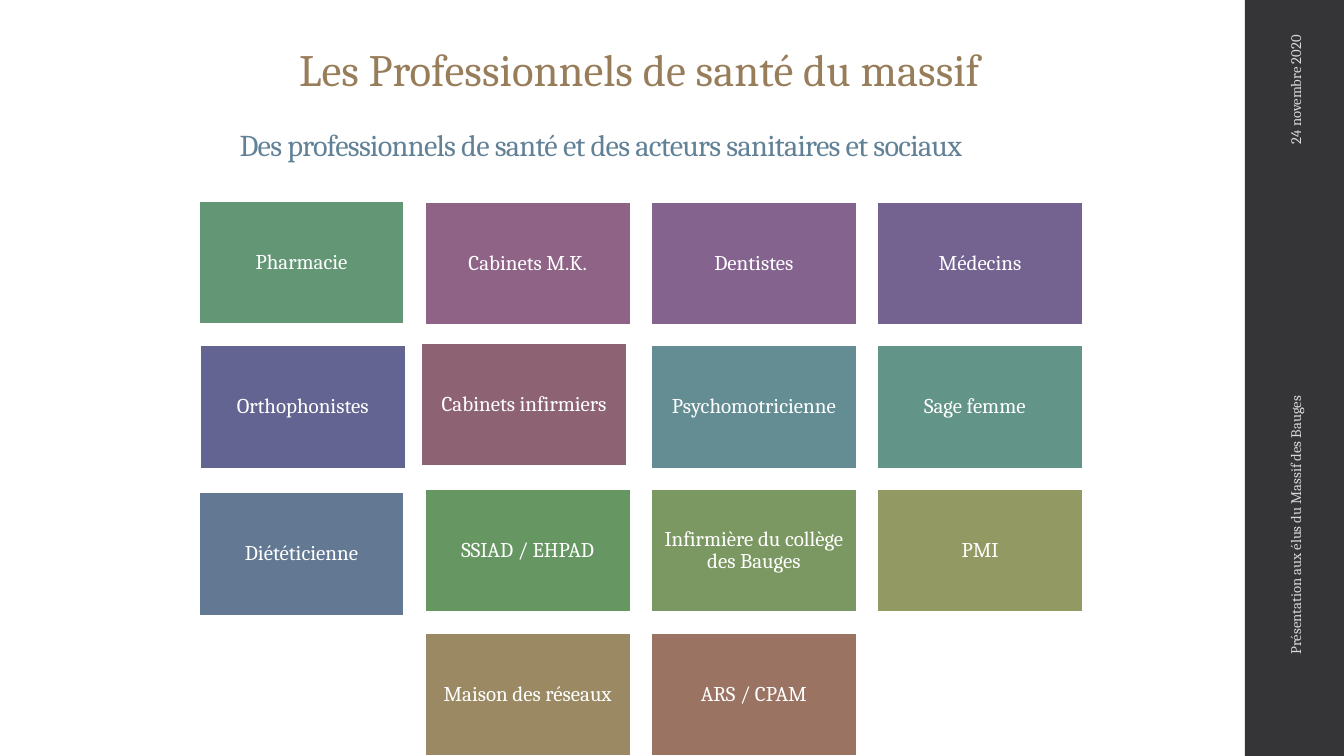
from pptx import Presentation
from pptx.dml.color import RGBColor
from pptx.enum import shapes, text
from pptx.util import Cm, Pt

FONT = "Cambria"
WHITE = RGBColor(255, 255, 255)
CHARCOAL = RGBColor(0x35, 0x35, 0x37)
PALE_GREY = RGBColor(0xD9, 0xD9, 0xDB)
BRONZE = RGBColor(0x98, 0x7D, 0x5A)
STEEL_BLUE = RGBColor(0x61, 0x81, 0x97)

TITLE = "Les Professionnels de santé du massif"
SUBTITLE = "Des professionnels de santé et des acteurs sanitaires et sociaux"
DATE = "24 novembre 2020"
FOOTER = "Présentation aux élus du Massif des Bauges"

CARDS = [
    ("Pharmacie", 0, 0, RGBColor(0x62, 0x96, 0x74)),
    ("Cabinets M.K.", 1, 0, RGBColor(0x8E, 0x63, 0x86)),
    ("Dentistes", 2, 0, RGBColor(0x85, 0x63, 0x8F)),
    ("Médecins", 3, 0, RGBColor(0x74, 0x63, 0x90)),
    ("Orthophonistes", 0, 1, RGBColor(0x63, 0x64, 0x91)),
    ("Cabinets infirmiers", 1, 1, RGBColor(0x8D, 0x63, 0x74)),
    ("Psychomotricienne", 2, 1, RGBColor(0x63, 0x8C, 0x93)),
    ("Sage femme", 3, 1, RGBColor(0x63, 0x94, 0x88)),
    ("Diététicienne", 0, 2, RGBColor(0x63, 0x78, 0x92)),
    ("SSIAD / EHPAD", 1, 2, RGBColor(0x66, 0x97, 0x62)),
    ("Infirmière du collège des Bauges", 2, 2, RGBColor(0x7C, 0x98, 0x62)),
    ("PMI", 3, 2, RGBColor(0x93, 0x99, 0x62)),
    ("Maison des réseaux", 1, 3, RGBColor(0x9A, 0x89, 0x62)),
    ("ARS / CPAM", 2, 3, RGBColor(0x9B, 0x73, 0x62)),
]
NUDGES = {
    "Pharmacie": (0, -0.02),
    "Orthophonistes": (0.03, 0),
    "Cabinets infirmiers": (-0.09, -0.06),
    "Diététicienne": (0, 0.08),
}
EXTRA_RIGHT_INSET = {"Sage femme": 0.26}

GRID_LEFT, GRID_TOP = 5.01, 5.09
COLUMN_STEP, ROW_STEP = 5.7, 3.62
CARD_WIDTH, CARD_HEIGHT = 5.18, 3.1
CARD_INSET = 0.15


def add_rectangle(slide, left, top, width, height, color):
    shape = slide.shapes.add_shape(
        shapes.MSO_SHAPE.RECTANGLE, Cm(left), Cm(top), Cm(width), Cm(height))
    shape.shadow.inherit = False
    shape.fill.solid()
    shape.fill.fore_color.rgb = color
    shape.line.fill.background()
    return shape


def write(shape, content, size, color, alignment):
    frame = shape.text_frame
    frame.word_wrap = True
    frame.vertical_anchor = text.MSO_ANCHOR.MIDDLE
    paragraph = frame.paragraphs[0]
    paragraph.text = content
    paragraph.alignment = alignment
    paragraph.font.name = FONT
    paragraph.font.size = Pt(size)
    paragraph.font.color.rgb = color
    return paragraph


def add_label(slide, box, content, size, color, alignment, rotation=0):
    shape = slide.shapes.add_textbox(*map(Cm, box))
    shape.rotation = rotation
    return write(shape, content, size, color, alignment)


def add_card(slide, name, column, row, color):
    shift_x, shift_y = NUDGES.get(name, (0, 0))
    card = add_rectangle(
        slide,
        GRID_LEFT + column * COLUMN_STEP + shift_x,
        GRID_TOP + row * ROW_STEP + shift_y,
        CARD_WIDTH, CARD_HEIGHT, color)
    card.line.color.rgb = WHITE
    card.line.width = Pt(1.1)
    frame = card.text_frame
    frame.margin_left = frame.margin_top = frame.margin_bottom = Cm(CARD_INSET)
    frame.margin_right = Cm(CARD_INSET + EXTRA_RIGHT_INSET.get(name, 0))
    paragraph = write(card, name, 15, WHITE, text.PP_ALIGN.CENTER)
    paragraph.line_spacing = 0.9


def main():
    presentation = Presentation()
    presentation.slide_width, presentation.slide_height = Cm(33.87), Cm(19.05)
    slide = presentation.slides.add_slide(presentation.slide_layouts[6])

    add_rectangle(slide, 31.37, 0, 2.5, 19.05, CHARCOAL)
    add_label(slide, (1.19, 0.91, 29.87, 1.63), TITLE, 32, BRONZE,
              text.PP_ALIGN.CENTER)
    subtitle = add_label(slide, (0.28, 3.05, 29.72, 1.3), SUBTITLE, 21.6,
                         STEEL_BLUE, text.PP_ALIGN.CENTER)
    subtitle.line_spacing = 0.9
    subtitle.runs[0]._r.get_or_add_rPr().set("spc", "-50")
    add_label(slide, (30, 2.77, 5.28, 1.02), DATE, 10.5, PALE_GREY,
              text.PP_ALIGN.RIGHT, 270)
    add_label(slide, (27.66, 11.25, 9.96, 1.02), FOOTER, 10.5, PALE_GREY,
              text.PP_ALIGN.LEFT, 270)

    for card in CARDS:
        add_card(slide, *card)

    presentation.save("out.pptx")


if __name__ == "__main__":
    main()
